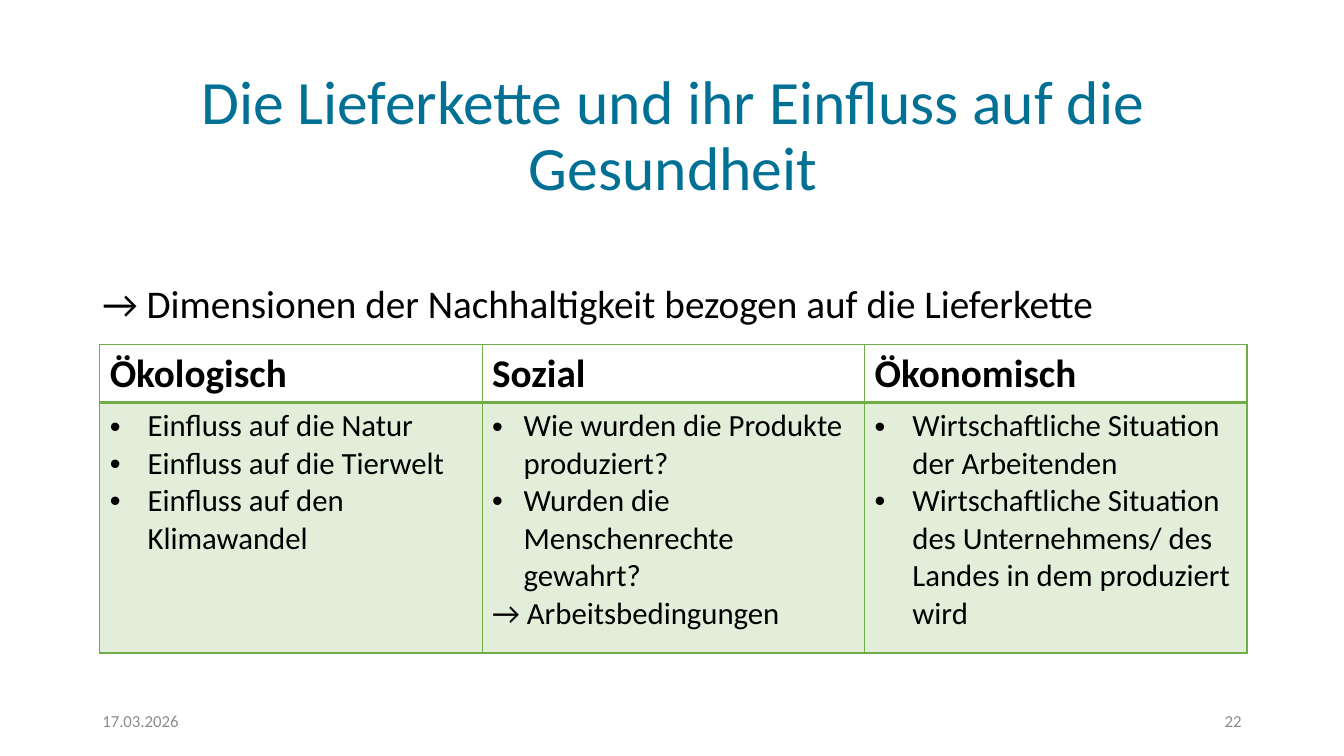
"""Build the slide on the supply chain and its dimensions of sustainability."""
from dataclasses import dataclass

from lxml import etree
from pptx import Presentation
from pptx import util as u
from pptx.dml.color import RGBColor
from pptx.enum import text
from pptx.oxml.ns import qn

COLOURS = {"title": "007094", "body": "000000", "footer": "8C8C8C", "green": "70AD47"}
FONT = "Calibri"
HEADER_SIZE, POINT_SIZE = 28, 22
TABLE_LEFT, TABLE_TOP, COLUMN_WIDTH = 71.2, 246.2, 273.2
HEADER_HEIGHT, POINTS_HEIGHT = 41.4, 178.9
THIN, THICK = 1, 2
LEFT, CENTRE, RIGHT = text.PP_ALIGN.LEFT, text.PP_ALIGN.CENTER, text.PP_ALIGN.RIGHT
TOP, MIDDLE = text.MSO_ANCHOR.TOP, text.MSO_ANCHOR.MIDDLE


@dataclass
class Label:
    wording: str
    left: float
    top: float
    width: float
    height: float
    size: float
    colour: str
    align: text.PP_ALIGN = LEFT
    anchor: text.MSO_ANCHOR = MIDDLE
    line_spacing: float = 1.0


@dataclass
class Dimension:
    heading: str
    points: list[str]
    indent: float
    conclusion: str = ""


LABELS = [
    Label("→ Dimensionen der Nachhaltigkeit bezogen auf die Lieferkette",
          66, 200, 828, 342.7, 28, "body", anchor=TOP, line_spacing=0.9),
    Label("17.03.2026", 66, 500.5, 216, 28.8, 12, "footer"),
    Label("22", 678, 500.5, 216, 28.8, 12, "footer", RIGHT),
    Label("Die Lieferkette und ihr Einfluss auf die Gesundheit",
          67, 46, 828, 104.4, 44, "title", CENTRE, line_spacing=0.9),
]
DIMENSIONS = [
    Dimension("Ökologisch", ["Einfluss auf die Natur", "Einfluss auf die Tierwelt",
                             "Einfluss auf den Klimawandel"], 27),
    Dimension("Sozial", ["Wie wurden die Produkte produziert?",
                         "Wurden die Menschenrechte gewahrt?"], 22.5,
              "→ Arbeitsbedingungen"),
    Dimension("Ökonomisch", ["Wirtschaftliche Situation der Arbeitenden",
                             "Wirtschaftliche Situation des Unternehmens/ des Landes "
                             "in dem produziert wird"], 27),
]


def style_runs(paragraph, size: float, colour: str, bold: bool = False) -> None:
    for run in paragraph.runs:
        run.font.name = FONT
        run.font.size = u.Pt(size)
        run.font.bold = bold
        run.font.color.rgb = RGBColor.from_string(COLOURS[colour])


def add_label(slide, label: Label) -> None:
    box = slide.shapes.add_textbox(u.Pt(label.left), u.Pt(label.top),
                                   u.Pt(label.width), u.Pt(label.height))
    frame = box.text_frame
    frame.word_wrap = True
    frame.vertical_anchor = label.anchor
    frame.text = label.wording
    paragraph = frame.paragraphs[0]
    paragraph.alignment = label.align
    paragraph.line_spacing = label.line_spacing
    style_runs(paragraph, label.size, label.colour)


def add_bullet(paragraph, indent: float) -> None:
    properties = paragraph._p.get_or_add_pPr()
    properties.set("marL", str(int(u.Pt(indent))))
    properties.set("indent", str(-int(u.Pt(indent))))
    etree.SubElement(properties, qn("a:buFont"), typeface="Arial")
    etree.SubElement(properties, qn("a:buChar"), char="•")


def set_borders(cell, top: float, bottom: float) -> None:
    properties = cell._tc.get_or_add_tcPr()
    widths = {"a:lnL": THIN, "a:lnR": THIN, "a:lnT": top, "a:lnB": bottom}
    for position, (side, width) in enumerate(widths.items()):
        line = etree.Element(qn(side), w=str(int(u.Pt(width))))
        fill = etree.SubElement(line, qn("a:solidFill"))
        etree.SubElement(fill, qn("a:srgbClr"), val=COLOURS["green"])
        properties.insert(position, line)


def tint(cell, percent: int) -> None:
    cell.fill.solid()
    cell.fill.fore_color.rgb = RGBColor.from_string(COLOURS["green"])
    colour = cell._tc.tcPr.find(f"{qn('a:solidFill')}/{qn('a:srgbClr')}")
    etree.SubElement(colour, qn("a:alpha"), val=str(percent * 1000))


def fill_column(heading_cell, points_cell, dimension: Dimension) -> None:
    heading_cell.text_frame.text = dimension.heading
    style_runs(heading_cell.text_frame.paragraphs[0], HEADER_SIZE, "body", bold=True)
    heading_cell.fill.background()
    set_borders(heading_cell, THIN, THICK)

    conclusions = [dimension.conclusion] if dimension.conclusion else []
    points_cell.text_frame.text = "\n".join(dimension.points + conclusions)
    for number, paragraph in enumerate(points_cell.text_frame.paragraphs):
        if number < len(dimension.points):
            add_bullet(paragraph, dimension.indent)
        style_runs(paragraph, POINT_SIZE, "body")
    tint(points_cell, 20)
    set_borders(points_cell, THICK, THIN)


def add_dimensions(slide, dimensions: list[Dimension]) -> None:
    count = len(dimensions)
    table = slide.shapes.add_table(
        2, count, u.Pt(TABLE_LEFT), u.Pt(TABLE_TOP), u.Pt(COLUMN_WIDTH * count),
        u.Pt(HEADER_HEIGHT + POINTS_HEIGHT)).table
    table.horz_banding = False
    for row, height in zip(table.rows, (HEADER_HEIGHT, POINTS_HEIGHT)):
        row.height = u.Pt(height)
    for index, dimension in enumerate(dimensions):
        table.columns[index].width = u.Pt(COLUMN_WIDTH)
        fill_column(table.cell(0, index), table.cell(1, index), dimension)


def main() -> None:
    deck = Presentation()
    deck.slide_width, deck.slide_height = u.Pt(960), u.Pt(540)
    slide = deck.slides.add_slide(deck.slide_layouts[6])
    for label in LABELS:
        add_label(slide, label)
    add_dimensions(slide, DIMENSIONS)
    deck.save("out.pptx")


if __name__ == "__main__":
    main()
